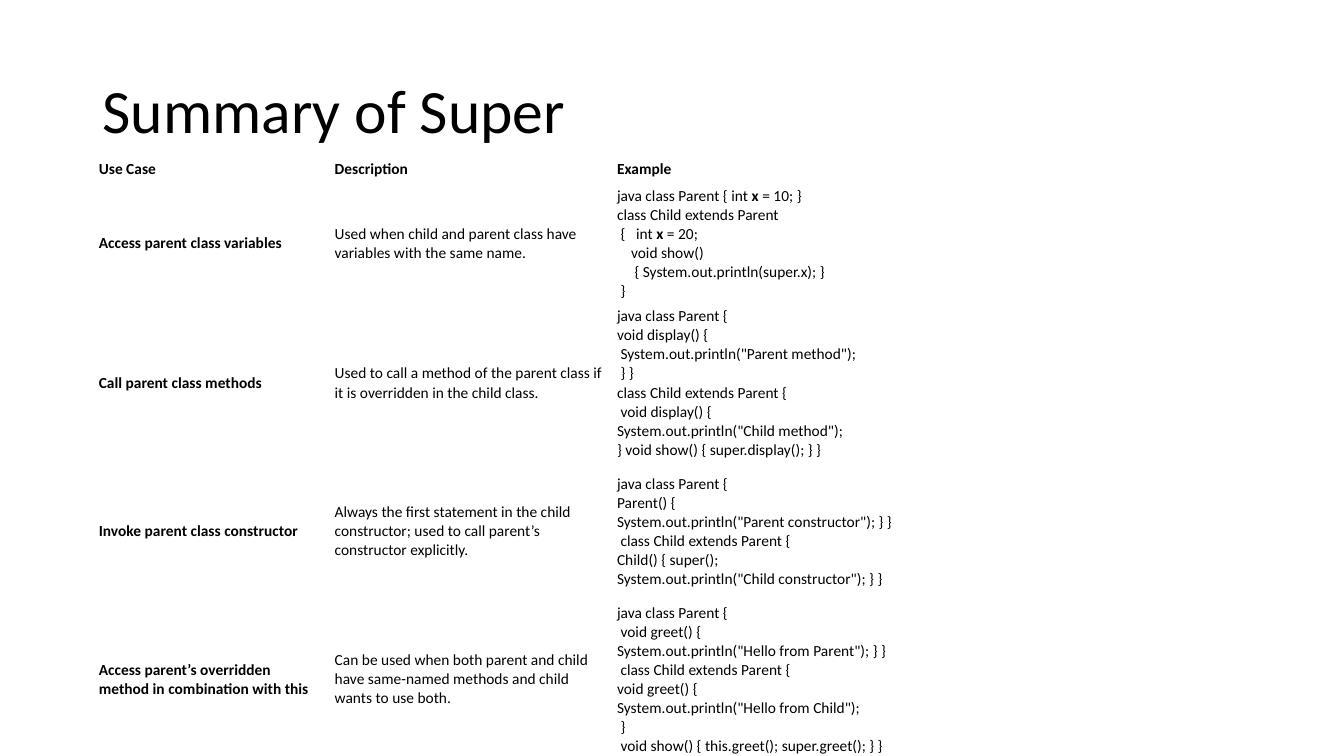
import pptx
import pptx.util
import pptx.dml.color
import pptx.enum.text
import pptx.oxml

Inches = pptx.util.Inches
Pt = pptx.util.Pt

TITLE = "Summary of Super"
HEADS = ("Use Case", "Description", "Example")
CASES = [
    ("Access parent class variables",
     "Used when child and parent class have variables with the same name.",
     [(0, "java class Parent { int* x* = 10; }"),
      (0, "class Child extends Parent"),
      (0, " {\tint *x* = 20;"),
      (4, "void show()"),
      (5, "{ System.out.println(super.x); }"),
      (1, "}")]),
    ("Call parent class methods",
     "Used to call a method of the parent class if it is overridden in the child class.",
     [(0, "java class Parent {"),
      (0, "void display() {"),
      (1, 'System.out.println("Parent method");'),
      (1, "} }"),
      (0, "class Child extends Parent {"),
      (1, "void display() {"),
      (0, 'System.out.println("Child method");'),
      (0, "} void show() { super.display(); } }")]),
    ("Invoke parent class constructor",
     "Always the first statement in the child constructor; used to call parent’s constructor explicitly.",
     [(0, "java class Parent {"),
      (0, "Parent() {"),
      (0, 'System.out.println("Parent constructor"); } }'),
      (1, "class Child extends Parent {"),
      (0, "Child() { super();"),
      (0, 'System.out.println("Child constructor"); } }')]),
    ("Access parent’s overridden method in combination with this",
     "Can be used when both parent and child have same-named methods and child wants to use both.",
     [(0, "java class Parent {"),
      (1, "void greet() {"),
      (0, 'System.out.println("Hello from Parent"); } }'),
      (1, "class Child extends Parent {"),
      (0, "void greet() {"),
      (0, 'System.out.println("Hello from Child");'),
      (1, "}"),
      (1, "void show() { this.greet(); super.greet(); } }")]),
]
WIDTHS = (2.34, 2.8, 6.64)
HEIGHTS = (0.29, 0.93, 1.58, 1.36, 1.58)
THEME = {"font": "Calibri", "ink": "000000", "title": 44, "body": 11,
         "step": 2.5, "tab": 0.19}
MIDDLE = pptx.enum.text.MSO_ANCHOR.MIDDLE
CELL = {"vertical_anchor": MIDDLE,
        "margin_left": Inches(0.06), "margin_right": Inches(0.06),
        "margin_top": Inches(0.03), "margin_bottom": Inches(0.03)}
PLAIN = {"first_row": False, "horz_banding": False}
BOX = {"word_wrap": True, "vertical_anchor": MIDDLE}


def style(item, form):
    for name, value in form.items():
        setattr(item, name, value)


def add_run(para, text, size, bold=False):
    run = para.add_run()
    run.text = text
    style(run.font, {"name": THEME["font"], "size": Pt(size), "bold": bold})
    run.font.color.rgb = pptx.dml.color.RGBColor.from_string(THEME["ink"])


def indent(para, steps, text):
    props = para._p.get_or_add_pPr()
    if steps:
        props.set("marL", str(Pt(THEME["step"] * steps)))
        props.set("indent", "0")
    if "\t" in text:
        tabs = pptx.oxml.parse_xml(
            '<a:tabLst xmlns:a="http://schemas.openxmlformats.org/drawingml/2006/main">'
            f'<a:tab pos="{Inches(THEME["tab"])}" algn="l"/></a:tabLst>')
        props.append(tabs)


def fill_cell(cell, lines, bold):
    style(cell, CELL)
    cell.fill.background()
    frame = cell.text_frame
    for row, (steps, text) in enumerate(lines):
        para = frame.add_paragraph() if row else frame.paragraphs[0]
        indent(para, steps, text)
        for part, piece in enumerate(text.split("*")):
            if piece:
                add_run(para, piece, THEME["body"], bold or part % 2 == 1)


def add_grid(slide):
    rows = [HEADS] + CASES
    spot = map(Inches, (0.92, 1.53, sum(WIDTHS), sum(HEIGHTS)))
    grid = slide.shapes.add_table(len(rows), len(HEADS), *spot).table
    style(grid, PLAIN)
    for col, width in zip(grid.columns, WIDTHS):
        col.width = Inches(width)
    for row, height in zip(grid.rows, HEIGHTS):
        row.height = Inches(height)
    for r, row in enumerate(rows):
        for c, text in enumerate(row):
            lines = [(0, text)] if isinstance(text, str) else text
            fill_cell(grid.cell(r, c), lines, r == 0 or c == 0)


def add_title(slide):
    frame = slide.shapes.add_textbox(*map(Inches, (0.92, 0.4, 11.5, 1.45))).text_frame
    style(frame, BOX)
    para = frame.paragraphs[0]
    para.line_spacing = 0.9
    add_run(para, TITLE, THEME["title"])


def main():
    deck = pptx.Presentation()
    style(deck, {"slide_width": Inches(13.33), "slide_height": Inches(7.5)})
    slide = deck.slides.add_slide(deck.slide_layouts[6])
    add_grid(slide)
    add_title(slide)
    deck.save("out.pptx")


if __name__ == "__main__":
    main()
